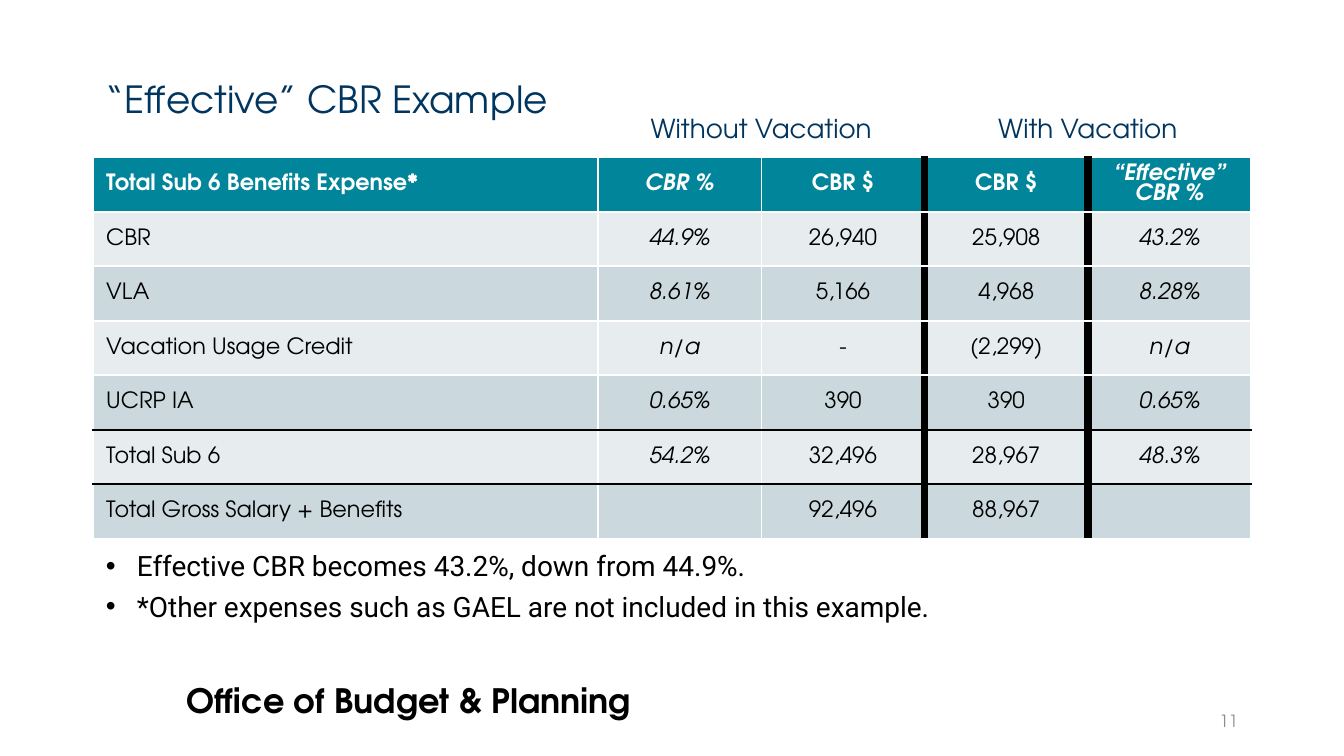
from lxml import etree
from pptx import Presentation
from pptx.dml.color import RGBColor
from pptx.enum import text
from pptx.oxml import ns
from pptx.util import Inches, Pt

COLORS = {
    "navy": "00355F", "teal": "01859A", "light": "E7EDEF", "mid": "CBD9DE",
    "black": "000000", "white": "FFFFFF", "gray": "8C8C8C",
}
HEADING_FONT = "TeX Gyre Adventor"
BODY_FONT = "Roboto"
LEFT, WIDTH = 0.69, 8.62


def style(paragraph, size, color, name=HEADING_FONT, bold=False, italic=False):
    font = paragraph.font
    font.size, font.name, font.bold, font.italic = Pt(size), name, bold, italic
    font.color.rgb = RGBColor.from_string(COLORS[color])


def add_text(box, lines):
    shape = slide.shapes.add_textbox(*[Inches(value) for value in box])
    frame = shape.text_frame
    frame.word_wrap = True
    frame.text = "\n".join(lines)
    return frame


presentation = Presentation()
presentation.slide_width = Inches(10)
presentation.slide_height = Inches(10 * 9 / 16)
slide = presentation.slides.add_slide(presentation.slide_layouts[6])

align = text.PP_ALIGN
middle = text.MSO_ANCHOR.MIDDLE
top = text.MSO_ANCHOR.TOP
labels = [
    ("Office of Budget & Planning", (1.29, 5.01, 4.35, 0.4), 18, "black", True, align.LEFT, top, 1.0),
    ("“Effective” CBR Example", (LEFT, 0.5, 6.47, 0.51), 20, "navy", False, align.LEFT, middle, 0.9),
    ("11", (7.06, 5.21, 2.25, 0.3), 9, "gray", False, align.RIGHT, middle, 1.0),
    ("Without Vacation", (4.45, 0.79, 2.43, 0.34), 14, "navy", False, align.CENTER, top, 1.0),
    ("With Vacation", (6.88, 0.79, 2.43, 0.34), 14, "navy", False, align.CENTER, top, 1.0),
]
for label, box, size, color, bold, alignment, anchor, spacing in labels:
    frame = add_text(box, [label])
    frame.vertical_anchor = anchor
    frame.paragraphs[0].alignment = alignment
    frame.paragraphs[0].line_spacing = spacing
    style(frame.paragraphs[0], size, color, bold=bold)

bullets = add_text((LEFT, 4.06, WIDTH, 0.78), [
    "Effective CBR becomes 43.2%, down from 44.9%.",
    "*Other expenses such as GAEL are not included in this example.",
])
for index, paragraph in enumerate(bullets.paragraphs):
    paragraph.line_spacing = 0.9
    paragraph.space_before = Pt(5.6 if index else 0)
    properties = paragraph._p.get_or_add_pPr()
    properties.set("marL", str(Inches(0.23)))
    properties.set("indent", str(-Inches(0.23)))
    etree.SubElement(properties, ns.qn("a:buFont"), typeface="Arial")
    etree.SubElement(properties, ns.qn("a:buChar"), char="•")
    style(paragraph, 15, "black", BODY_FONT)

rows = [
    ("Total Sub 6 Benefits Expense*", "CBR %", "CBR $", "CBR $", "“Effective” CBR %"),
    ("CBR", "44.9%", "26,940", "25,908", "43.2%"),
    ("VLA", "8.61%", "5,166", "4,968", "8.28%"),
    ("Vacation Usage Credit", "n/a", "-", "(2,299)", "n/a"),
    ("UCRP IA", "0.65%", "390", "390", "0.65%"),
    ("Total Sub 6", "54.2%", "32,496", "28,967", "48.3%"),
    ("Total Gross Salary + Benefits", "", "92,496", "88,967", ""),
]
TABLE_HEIGHT, FIRST_COLUMN = 2.84, 3.76
row_rules = {1: ("white", 1.5), 5: ("black", 1.5), 6: ("black", 1.5)}
column_rules = {3: ("black", 4.5), 4: ("black", 4.5)}
thin_rule = ("white", 1)

table = slide.shapes.add_table(
    len(rows), 5, Inches(LEFT), Inches(1.17), Inches(WIDTH), Inches(TABLE_HEIGHT)
).table
for index, column in enumerate(table.columns):
    column.width = Inches((WIDTH - FIRST_COLUMN) / 4 if index else FIRST_COLUMN)

for row, values in enumerate(rows):
    table.rows[row].height = Inches(TABLE_HEIGHT / len(rows))
    for column, value in enumerate(values):
        cell = table.cell(row, column)
        cell.text = value
        cell.vertical_anchor = middle
        cell.margin_top = cell.margin_bottom = Inches(0.03)
        paragraph = cell.text_frame.paragraphs[0]
        paragraph.alignment = align.CENTER if column else align.LEFT
        style(paragraph, 12, "black" if row else "white",
              bold=row == 0, italic=column in (1, 4))
        if row == 0 and column == 4:
            paragraph.line_spacing = Pt(11)

        properties = cell._tc.get_or_add_tcPr()
        borders = {
            "L": column_rules.get(column, thin_rule),
            "R": column_rules.get(column + 1, thin_rule),
            "T": row_rules.get(row, thin_rule),
            "B": row_rules.get(row + 1, thin_rule),
        }
        for side, (color, width) in borders.items():
            line = etree.SubElement(properties, ns.qn("a:ln" + side), w=str(Pt(width)))
            fill = etree.SubElement(line, ns.qn("a:solidFill"))
            etree.SubElement(fill, ns.qn("a:srgbClr"), val=COLORS[color])
        cell.fill.solid()
        band = "teal" if row == 0 else "light" if row % 2 else "mid"
        cell.fill.fore_color.rgb = RGBColor.from_string(COLORS[band])

presentation.save("out.pptx")
